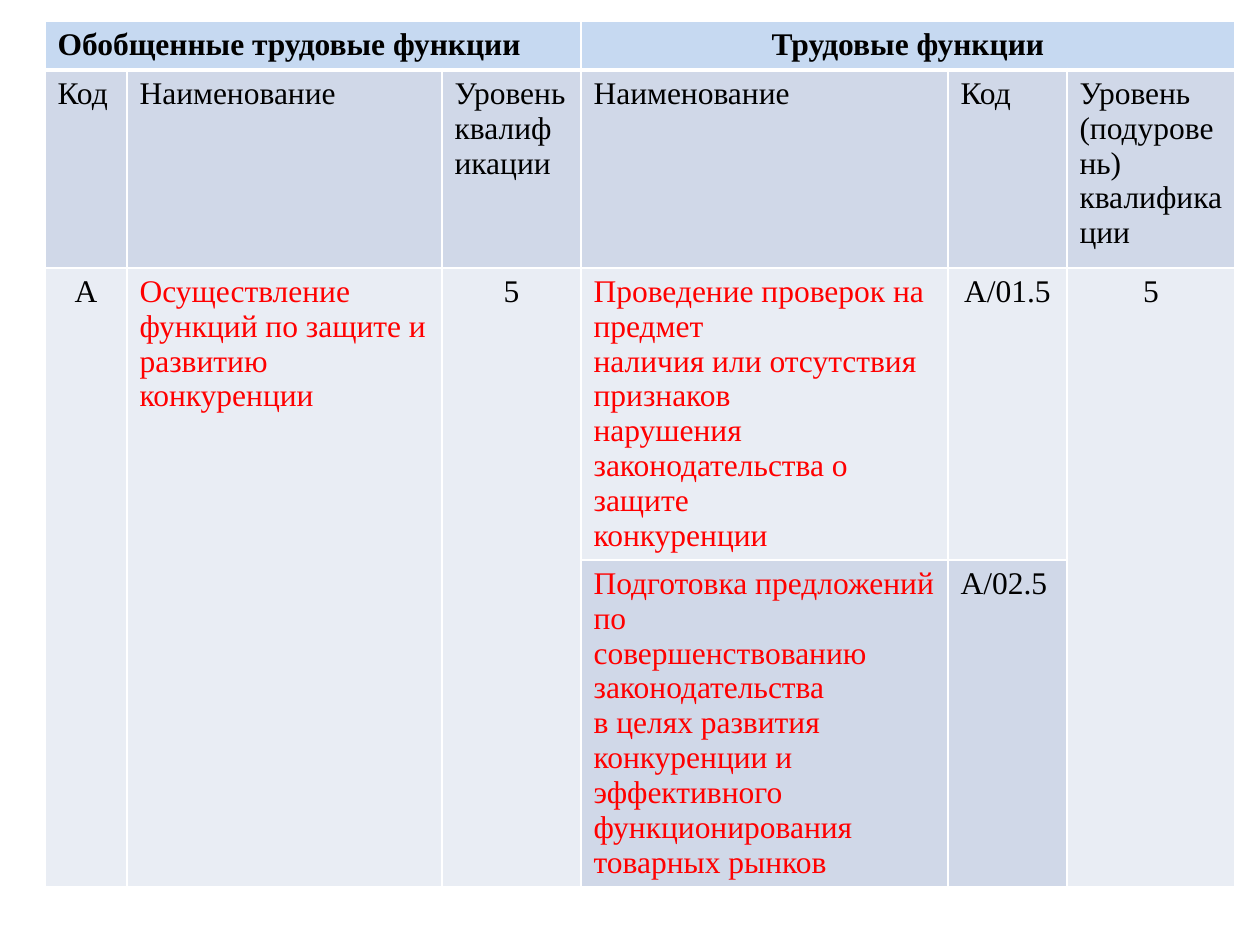
import pptx
import pptx.dml.color
import pptx.enum.text
import pptx.oxml
import pptx.oxml.ns
import pptx.util

EMU_PER_PX = 914400 / 126
FONT = "Times New Roman"
COLORS = {
    "header": "C6D9F1",
    "dark_band": "D0D8E8",
    "light_band": "E9EDF4",
    "border": "FFFFFF",
    "text": "000000",
    "accent": "FF0000",
}
LEFT, TOP = 45, 21
COLUMN_WIDTHS = [82, 315, 139, 367, 119, 168]
ROW_HEIGHTS = [49, 198, 292, 326]
ROW_FILLS = ["header", "dark_band", "light_band", "dark_band"]
MERGES = [((0, 0), (0, 2)), ((0, 3), (0, 5))] + [
    ((2, column), (3, column)) for column in (0, 1, 2, 5)
]
COLUMN_TITLES = [
    "Код", "Наименование", "Уровень квалификации",
    "Наименование", "Код", "Уровень (подуровень) квалификации",
]
GENERAL_FUNCTION = [
    "Осуществление", "функций по защите и", "развитию", "конкуренции",
]
INSPECTION_FUNCTION = [
    "Проведение проверок на предмет",
    "наличия или отсутствия признаков",
    "нарушения законодательства о защите",
    "конкуренции",
]
PROPOSAL_FUNCTION = [
    "Подготовка предложений по",
    "совершенствованию законодательства",
    "в целях развития конкуренции и",
    "эффективного функционирования",
    "товарных рынков",
]


def px(length):
    return pptx.util.Emu(round(length * EMU_PER_PX))


def rgb(name):
    return pptx.dml.color.RGBColor.from_string(COLORS[name])


def set_borders(cell, top=1, bottom=1):
    """Draw all four sides; widths are in points."""
    properties = cell._tc.get_or_add_tcPr()
    sides = {"lnL": 1, "lnR": 1, "lnT": top, "lnB": bottom}
    for position, (side, width) in enumerate(sides.items()):
        line = pptx.oxml.parse_xml(
            f'<a:{side} {pptx.oxml.ns.nsdecls("a")} w="{pptx.util.Pt(width)}">'
            f'<a:solidFill><a:srgbClr val="{COLORS["border"]}"/></a:solidFill>'
            f'</a:{side}>'
        )
        properties.insert(position, line)


def write_cell(cell, lines, color="text", bold=False, centered=False):
    frame = cell.text_frame
    for index, text in enumerate(lines):
        paragraph = frame.add_paragraph() if index else frame.paragraphs[0]
        if centered:
            paragraph.alignment = pptx.enum.text.PP_ALIGN.CENTER
        run = paragraph.add_run()
        run.text = text
        run.font.name = FONT
        run.font.size = pptx.util.Pt(18)
        run.font.bold = bold
        run.font.color.rgb = rgb(color)


def add_grid(slide):
    table = slide.shapes.add_table(
        len(ROW_HEIGHTS), len(COLUMN_WIDTHS), px(LEFT), px(TOP),
        px(sum(COLUMN_WIDTHS)), px(sum(ROW_HEIGHTS)),
    ).table
    for column, width in zip(table.columns, COLUMN_WIDTHS):
        column.width = px(width)
    for index, (row, height) in enumerate(zip(table.rows, ROW_HEIGHTS)):
        row.height = px(height)
        for cell in row.cells:
            cell.fill.solid()
            cell.fill.fore_color.rgb = rgb(ROW_FILLS[index])
            set_borders(cell, top=3 if index == 1 else 1,
                        bottom=3 if index == 0 else 1)
    for first, last in MERGES:
        table.cell(*first).merge(table.cell(*last))
    return table


def fill_table(table):
    write_cell(table.cell(0, 0), ["Обобщенные трудовые функции"], bold=True)
    write_cell(table.cell(0, 3), ["Трудовые функции"], bold=True, centered=True)
    for column, title in enumerate(COLUMN_TITLES):
        write_cell(table.cell(1, column), [title])
    for column, text in {0: "А", 2: "5", 4: "A/01.5 ", 5: "5"}.items():
        write_cell(table.cell(2, column), [text], centered=True)
    write_cell(table.cell(2, 1), GENERAL_FUNCTION, "accent")
    write_cell(table.cell(2, 3), INSPECTION_FUNCTION, "accent")
    write_cell(table.cell(3, 3), PROPOSAL_FUNCTION, "accent")
    write_cell(table.cell(3, 4), ["A/02.5"])


def main():
    presentation = pptx.Presentation()
    presentation.slide_width = px(1260)
    presentation.slide_height = px(945)
    slide = presentation.slides.add_slide(presentation.slide_layouts[6])
    fill_table(add_grid(slide))
    presentation.save("out.pptx")


if __name__ == "__main__":
    main()
